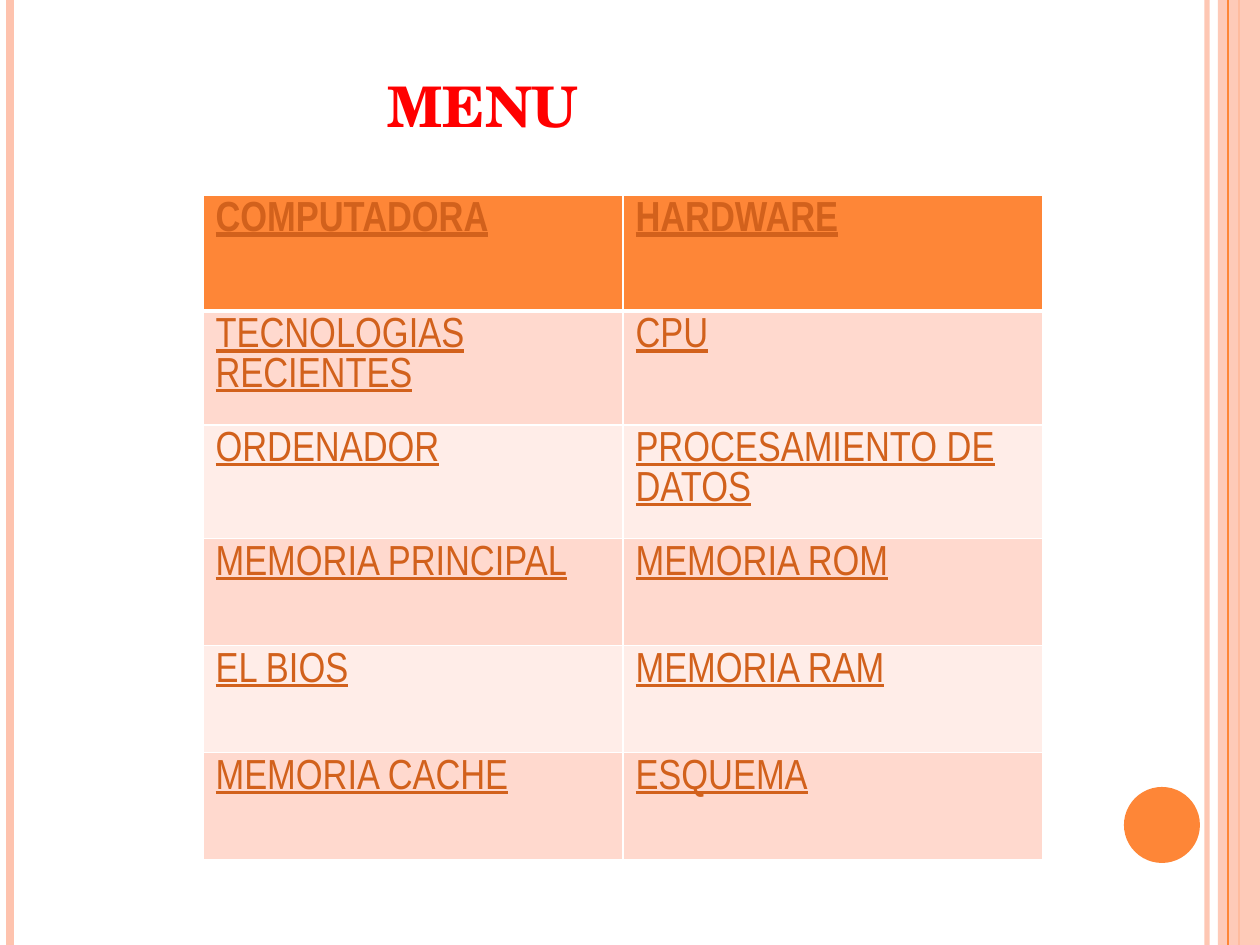
from lxml.etree import SubElement
from pptx import Presentation
from pptx.dml.color import RGBColor
from pptx.enum.shapes import MSO_CONNECTOR, MSO_SHAPE
from pptx.enum.text import MSO_ANCHOR, PP_ALIGN
from pptx.oxml.ns import qn
from pptx.util import Pt

# Content
TITLE = "MENU"
MENU = [
    ("COMPUTADORA", "HARDWARE"),
    ("TECNOLOGIAS RECIENTES", "CPU"),
    ("ORDENADOR", "PROCESAMIENTO DE DATOS"),
    ("MEMORIA PRINCIPAL", "MEMORIA ROM"),
    ("EL BIOS", "MEMORIA RAM"),
    ("MEMORIA CACHE", "ESQUEMA"),
]

# Style and layout, in px (126 to the inch)
COLORS = {"orange": "FE8637", "peach": "FEC3AE", "title": "FF0000", "link": "D2611C",
          "dark_band": "FFD9CE", "light_band": "FFEDE8", "border": "FFFFFF"}
EMU_PER_PX = 914400 / 126
SLIDE_W, SLIDE_H = 1260, 945
TABLE_LEFT, TABLE_TOP, COLUMN_W = 203, 195, 420
ROW_HEIGHTS = [116, 114] + [107] * 4
# x, colour, width in points, opacity in percent
STRIPES_BEHIND = [(1207, "peach", 3, 93), (10, "peach", 4.5, 100), (1239, "orange", 1.5, 100)]
STRIPE_FRONT = (1228, "orange", 0.75, 100)


def px(n):
    return round(n * EMU_PER_PX)


def rgb(name):
    return RGBColor.from_string(COLORS[name])


def set_opacity(parent, percent):
    color = parent.find(".//" + qn("a:srgbClr"))
    SubElement(color, qn("a:alpha"), val=str(percent * 1000))


def add_stripe(x, color, width, opacity):
    stripe = slide.shapes.add_connector(MSO_CONNECTOR.STRAIGHT, px(x), 0, px(x), px(SLIDE_H))
    stripe.line.color.rgb = rgb(color)
    stripe.line.width = Pt(width)
    properties = stripe._element.spPr
    if opacity < 100:
        set_opacity(properties, opacity)
    SubElement(properties, qn("a:effectLst"))


def add_block(kind, color, *box):
    block = slide.shapes.add_shape(kind, *map(px, box))
    block.shadow.inherit = False
    block.fill.solid()
    block.fill.fore_color.rgb = rgb(color)
    block.line.fill.background()
    return block


def format_run(run, font, size, color, bold, underline=False):
    run.font.name = font
    run.font.size = Pt(size)
    run.font.color.rgb = rgb(color)
    run.font.bold = bold
    run.font.underline = underline


def set_borders(cell, widths):
    properties = cell._tc.get_or_add_tcPr()
    for index, (side, width) in enumerate(widths.items()):
        border = SubElement(properties, qn("a:ln" + side), w=str(Pt(width)))
        fill = SubElement(border, qn("a:solidFill"))
        SubElement(fill, qn("a:srgbClr"), val=COLORS["border"])
        properties.remove(border)
        properties.insert(index, border)  # borders come before the fill


prs = Presentation()
prs.slide_width, prs.slide_height = px(SLIDE_W), px(SLIDE_H)
slide = prs.slides.add_slide(prs.slide_layouts[6])

# Side decoration
for stripe_values in STRIPES_BEHIND:
    add_stripe(*stripe_values)
side_band = add_block(MSO_SHAPE.RECTANGLE, "peach", 1218, 0, 42, SLIDE_H)
set_opacity(side_band._element.spPr, 87)
add_stripe(*STRIPE_FRONT)
add_block(MSO_SHAPE.OVAL, "orange", 1124, 787, 76, 76)

# Title
heading = slide.shapes.add_textbox(px(95), px(55), px(496), px(100)).text_frame
heading.word_wrap = True
heading.vertical_anchor = MSO_ANCHOR.MIDDLE
heading.text = TITLE
heading.paragraphs[0].alignment = PP_ALIGN.RIGHT
format_run(heading.paragraphs[0].runs[0], "TeX Gyre Schola", 32, "title", True)

# Menu table
menu = slide.shapes.add_table(len(MENU), 2, px(TABLE_LEFT), px(TABLE_TOP),
                              px(2 * COLUMN_W), px(sum(ROW_HEIGHTS))).table
for column in menu.columns:
    column.width = px(COLUMN_W)
for r, (entries, height) in enumerate(zip(MENU, ROW_HEIGHTS)):
    menu.rows[r].height = px(height)
    is_header = r == 0
    band = "orange" if is_header else "dark_band" if r % 2 else "light_band"
    for c, entry in enumerate(entries):
        cell = menu.cell(r, c)
        cell.text_frame.text = entry
        format_run(cell.text_frame.paragraphs[0].runs[0], "Arial Narrow", 24, "link",
                   is_header, underline=True)
        cell.fill.solid()
        cell.fill.fore_color.rgb = rgb(band)
        set_borders(cell, {"L": 1, "R": 1, "T": 3 if r == 1 else 1, "B": 3 if is_header else 1})

prs.save("out.pptx")
